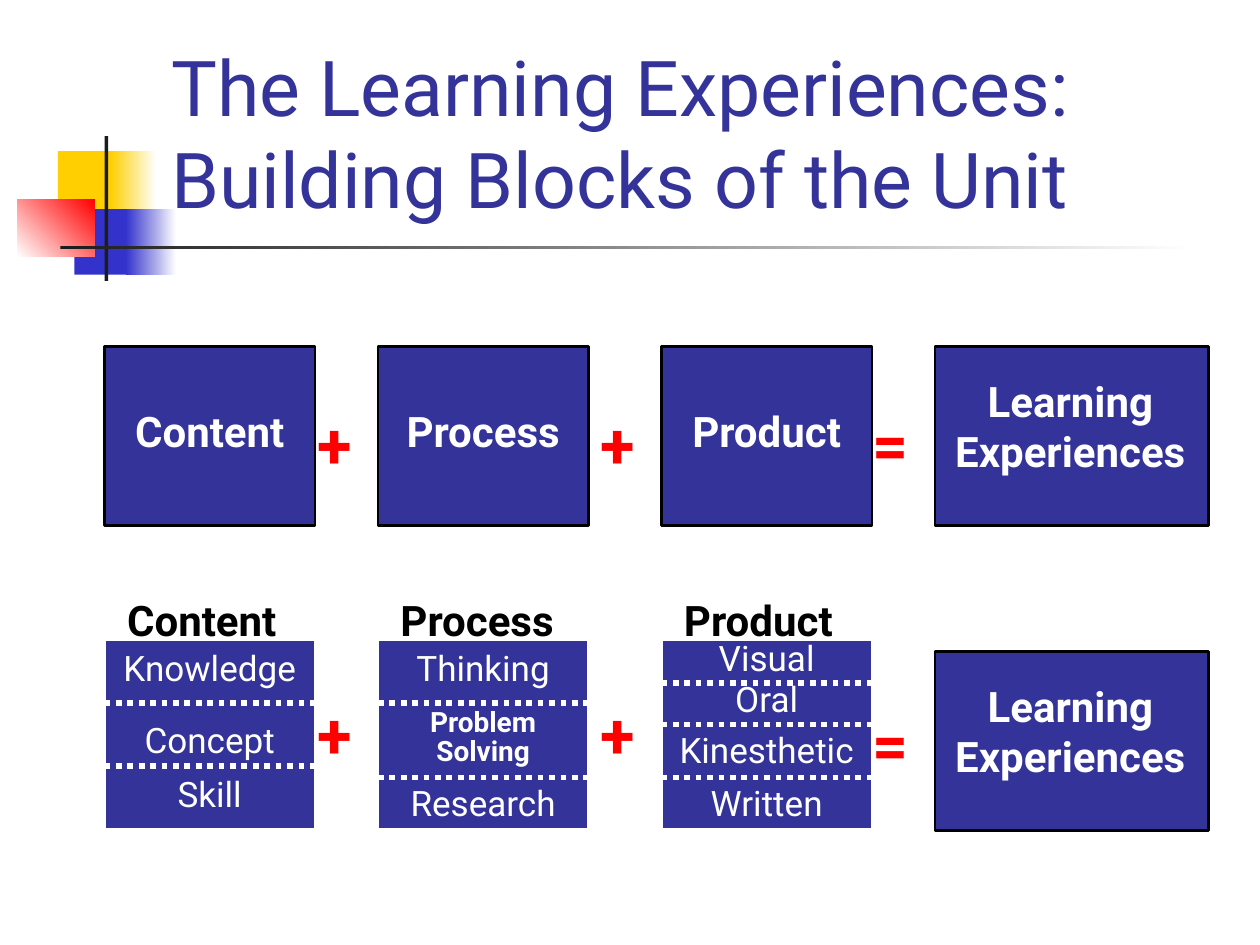
from dataclasses import dataclass

from lxml.etree import SubElement
from pptx import Presentation
from pptx.dml.color import RGBColor
from pptx.enum.dml import MSO_LINE
from pptx.enum.shapes import MSO_CONNECTOR, MSO_SHAPE
from pptx.enum.text import MSO_ANCHOR, PP_ALIGN
from pptx.oxml.ns import qn
from pptx.util import Inches, Pt


@dataclass(frozen=True)
class Theme:
    font: str = "Roboto"
    navy: str = "333399"
    blue: str = "3333CC"
    yellow: str = "FFCF01"
    red: str = "FF0000"
    charcoal: str = "1C1C1C"
    black: str = "000000"
    white: str = "FFFFFF"
    title_size: int = 44
    sign_size: int = 36
    heading_size: int = 24
    item_size: int = 20
    small_size: int = 16
    border: float = 1.5
    divider: float = 3.25


THEME = Theme()
COLUMN_LEFTS = (0.83, 3, 5.25)
COLUMN_WIDTH = 1.67
HEADINGS = ("Content", "Process", "Product")
RESULT = "Learning Experiences"
STACK_TOP = 5.08
# Each column: (text, top of its box), then the heights of the dividers.
COLUMN_ITEMS = (
    (("Knowledge", 5.08), ("Concept", 5.65), ("Skill", 6.08)),
    (("Thinking", 5.08), ("Research", 6.15)),
    (("Visual", 5), ("Oral", 5.33), ("Kinesthetic", 5.73), ("Written", 6.15)),
)
COLUMN_DIVIDERS = ((5.58, 6.08), (5.58, 6.17), (5.42, 5.75, 6.17))


def color(code):
    return RGBColor.from_string(code)


def add_block(page, left, top, width, height, fill, *, fade_to=None, angle=0, border=None):
    """Add a rectangle, solid or fading from fill to fade_to."""
    block = page.shapes.add_shape(
        MSO_SHAPE.RECTANGLE, Inches(left), Inches(top), Inches(width), Inches(height))
    block.shadow.inherit = False
    if fade_to:
        block.fill.gradient()
        block.fill.gradient_angle = angle
        for stop, code in zip(block.fill.gradient_stops, (fill, fade_to)):
            stop.color.rgb = color(code)
    else:
        block.fill.solid()
        block.fill.fore_color.rgb = color(fill)
    if border:
        block.line.color.rgb = color(border)
        block.line.width = Pt(THEME.border)
    else:
        block.line.fill.background()


def add_text(page, text, left, top, width, height, *, size, ink=THEME.white, bold=False,
             align=PP_ALIGN.CENTER, anchor=MSO_ANCHOR.TOP, line_pitch=None, gap=None):
    """Add a text box; each line of text is a paragraph, and a vertical tab breaks a line."""
    box = page.shapes.add_textbox(Inches(left), Inches(top), Inches(width), Inches(height))
    frame = box.text_frame
    frame.word_wrap = True
    frame.vertical_anchor = anchor
    frame.text = text
    for para in frame.paragraphs:
        para.alignment = align
        if line_pitch:
            para.line_spacing = Pt(line_pitch)
        if gap:
            para.space_before = Pt(gap)
        for span in para.runs:
            span.font.name = THEME.font
            span.font.size = Pt(size)
            span.font.bold = bold
            span.font.color.rgb = color(ink)


def add_divider(page, left, top):
    divider = page.shapes.add_connector(
        MSO_CONNECTOR.STRAIGHT, Inches(left), Inches(top),
        Inches(left + COLUMN_WIDTH), Inches(top))
    divider.line.color.rgb = color(THEME.white)
    divider.line.width = Pt(THEME.divider)
    divider.line.dash_style = MSO_LINE.ROUND_DOT
    SubElement(divider._element.spPr, qn("a:effectLst"))


def add_sign(page, sign, left, top):
    add_text(page, sign, left, top, 0.67, 0.7, size=THEME.sign_size, ink=THEME.red,
             bold=True, align=PP_ALIGN.LEFT)


def add_signs(page, plus_top, equals_top):
    add_sign(page, "+", 2.42, plus_top)
    add_sign(page, "+", 4.67, plus_top)
    add_sign(page, "=", 6.83, equals_top)


def add_result(page, top):
    add_block(page, 7.42, top, 2.17, 1.42, THEME.navy, border=THEME.black)
    add_text(page, RESULT, 7.33, top + 0.18, 2.33, 0.9, size=THEME.heading_size, bold=True)


def add_decoration(page):
    add_block(page, 0.46, 1.2, 0.48, 0.52, THEME.yellow)
    add_block(page, 0.88, 1.2, 0.36, 0.52, THEME.yellow, fade_to=THEME.white)
    add_block(page, 0.59, 1.66, 0.46, 0.52, THEME.blue)
    add_block(page, 1, 1.66, 0.4, 0.52, THEME.blue, fade_to=THEME.white)
    add_block(page, 0.14, 1.58, 0.61, 0.46, THEME.white, fade_to=THEME.red, angle=45)
    add_block(page, 0.83, 1.08, 0.03, 1.15, THEME.charcoal)
    add_block(page, 0.48, 1.95, 9, 0.03, THEME.charcoal, fade_to=THEME.white)


def add_summary_row(page):
    for left, heading in zip(COLUMN_LEFTS, HEADINGS):
        add_block(page, left, 2.75, COLUMN_WIDTH, 1.42, THEME.navy, border=THEME.black)
        add_text(page, heading, left, 3.17, COLUMN_WIDTH, 0.5,
                 size=THEME.heading_size, bold=True)
    add_signs(page, 3.17, 3.17)
    add_result(page, 2.75)


def add_detail_row(page):
    for left, heading, items, dividers in zip(
            COLUMN_LEFTS, HEADINGS, COLUMN_ITEMS, COLUMN_DIVIDERS):
        add_block(page, left, STACK_TOP, COLUMN_WIDTH, 1.5, THEME.navy, border=THEME.white)
        for top in dividers:
            add_divider(page, left, top)
        add_text(page, heading, left + 0.08, 4.67, 1.58, 0.5, size=THEME.heading_size,
                 ink=THEME.black, bold=True, align=PP_ALIGN.LEFT)
        for text, top in items:
            add_text(page, text, left, top, COLUMN_WIDTH, 0.43, size=THEME.item_size)
    add_text(page, "Problem\nSolving", 2.75, 5.68, 2.17, 0.48, size=THEME.small_size,
             bold=True, line_pitch=9, gap=8)
    add_signs(page, 5.47, 5.55)
    add_result(page, 5.17)


def main():
    deck = Presentation()
    deck.slide_width, deck.slide_height = Inches(10), Inches(7.5)
    page = deck.slides.add_slide(deck.slide_layouts[6])
    add_decoration(page)
    add_text(page, "The Learning Experiences:\vBuilding Blocks of the Unit",
             1.26, 0.23, 8.52, 1.6, size=THEME.title_size, ink=THEME.navy,
             align=PP_ALIGN.LEFT, anchor=MSO_ANCHOR.BOTTOM)
    add_summary_row(page)
    add_detail_row(page)
    deck.save("out.pptx")


if __name__ == "__main__":
    main()
